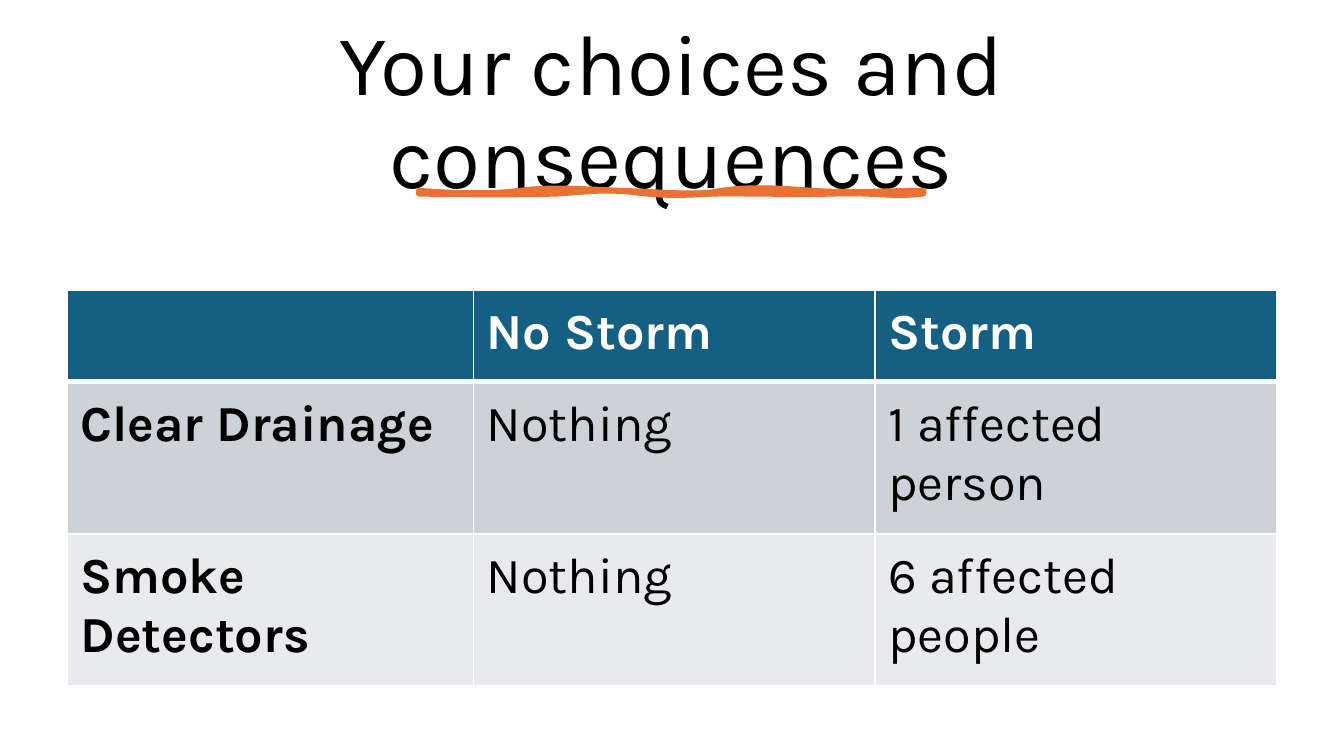
"""Build a slide with a title, a hand-drawn underline and a table of consequences."""
import pptx
import pptx.dml.color
import pptx.enum.text
import pptx.oxml
import pptx.oxml.ns
import pptx.util

Cm = pptx.util.Cm
RGBColor = pptx.dml.color.RGBColor

FONT = "Karla"
BLACK = RGBColor(0x00, 0x00, 0x00)
WHITE = RGBColor(0xFF, 0xFF, 0xFF)
ORANGE = RGBColor(0xE9, 0x71, 0x32)
BLUE = RGBColor(0x15, 0x60, 0x82)
ROW_FILLS = [BLUE, RGBColor(0xCC, 0xD2, 0xD8), RGBColor(0xE8, 0xEA, 0xED)]

ROWS = [
    ["", "No Storm", "Storm"],
    ["Clear Drainage", "Nothing", "1 affected person"],
    ["Smoke Detectors", "Nothing", "6 affected people"],
]
COL_WIDTHS = [7.68, 7.59, 7.59]
ROW_HEIGHTS = [1.73, 2.87, 2.87]

UPPER_EDGE = [
    (7.92, 3.61), (8.53, 3.66), (9.3, 3.68), (9.83, 3.61),
    (10.36, 3.53), (11.05, 3.58), (11.73, 3.61),
    (12.45, 3.63), (13.16, 3.71), (13.64, 3.61),
    (14.15, 3.53), (14.68, 3.56), (15.37, 3.61),
    (16.03, 3.66), (16.84, 3.61), (17.45, 3.61),
]
LOWER_EDGE = [
    (17.45, 3.66), (16.89, 3.73), (16.51, 3.63), (15.75, 3.66),
    (14.99, 3.68), (14.83, 3.66), (14.12, 3.66),
    (13.41, 3.63), (12.95, 3.73), (12.22, 3.66),
    (11.48, 3.56), (11.23, 3.61), (10.52, 3.66),
    (9.8, 3.68), (9.07, 3.68), (7.92, 3.66),
]


def format_run(r, size, color, bold=False):
    """Set the font of a run."""
    r.font.name = FONT
    r.font.size = pptx.util.Pt(size)
    r.font.bold = bold
    r.font.color.rgb = color


def add_title(s, text):
    """Fill and place the title placeholder."""
    sp = s.shapes.title
    sp.left, sp.top, sp.width, sp.height = Cm(1.32), Cm(0.86), Cm(22.73), Cm(2.59)
    tf = sp.text_frame
    tf.text = text
    tf.word_wrap = True
    tf.auto_size = pptx.enum.text.MSO_AUTO_SIZE.NONE
    tf.vertical_anchor = pptx.enum.text.MSO_ANCHOR.MIDDLE
    p = tf.paragraphs[0]
    p.alignment = pptx.enum.text.PP_ALIGN.CENTER
    p.line_spacing = 0.9
    format_run(p.runs[0], 46, BLACK)


def curve_points(edge, steps=8):
    """Sample a chain of cubic curves as points in EMU."""
    points = [edge[0]]
    for i in range(0, len(edge) - 1, 3):
        for step in range(1, steps + 1):
            t = step / steps
            weights = [(1 - t) ** 3, 3 * t * (1 - t) ** 2, 3 * t * t * (1 - t), t ** 3]
            points.append([
                sum(w * point[axis] for w, point in zip(weights, edge[i:i + 4]))
                for axis in (0, 1)
            ])
    return [(Cm(x), Cm(y)) for x, y in points]


def add_underline(s):
    """Draw the wavy stroke under the title."""
    start, *rest = curve_points(UPPER_EDGE) + curve_points(LOWER_EDGE)
    builder = s.shapes.build_freeform(*start)
    builder.add_line_segments(rest, close=True)
    sp = builder.convert_to_shape()
    sp.shadow.inherit = False
    sp.fill.solid()
    sp.fill.fore_color.rgb = ORANGE
    sp.line.color.rgb = ORANGE
    sp.line.width = pptx.util.Pt(3.25)


def set_border(cell, side, points):
    """Give one side of a cell a white border."""
    ns = pptx.oxml.ns.nsdecls("a")
    cell._tc.get_or_add_tcPr().append(pptx.oxml.parse_xml(
        f'<a:ln{side} {ns} w="{pptx.util.Pt(points)}"><a:solidFill>'
        f'<a:srgbClr val="{WHITE}"/></a:solidFill></a:ln{side}>'))


def format_cell(cell, text, row, col):
    """Write and style one table cell."""
    for side in "LRTB":
        thick = (row, side) in [(0, "B"), (1, "T")]
        set_border(cell, side, 3 if thick else 1)
    cell.fill.solid()
    cell.fill.fore_color.rgb = ROW_FILLS[row]
    cell.margin_left = cell.margin_right = Cm(0.25)
    cell.margin_top = cell.margin_bottom = Cm(0.25)
    cell.text_frame.text = text
    for r in cell.text_frame.paragraphs[0].runs:
        format_run(r, 27, BLACK if row else WHITE, row == 0 or col == 0)


def add_consequences(s):
    """Add the table of choices and consequences."""
    table = s.shapes.add_table(
        len(ROWS), len(COL_WIDTHS), Cm(1.27), Cm(5.49),
        Cm(sum(COL_WIDTHS)), Cm(sum(ROW_HEIGHTS))).table
    for column, width in zip(table.columns, COL_WIDTHS):
        column.width = Cm(width)
    for row, height in enumerate(ROW_HEIGHTS):
        table.rows[row].height = Cm(height)
        for col, text in enumerate(ROWS[row]):
            format_cell(table.cell(row, col), text, row, col)


def main():
    """Build and save the presentation."""
    prs = pptx.Presentation()
    prs.slide_width, prs.slide_height = Cm(25.4), Cm(14.29)
    s = prs.slides.add_slide(prs.slide_layouts[5])
    add_title(s, "Your choices and consequences")
    add_underline(s)
    add_consequences(s)
    prs.save("out.pptx")


if __name__ == "__main__":
    main()
